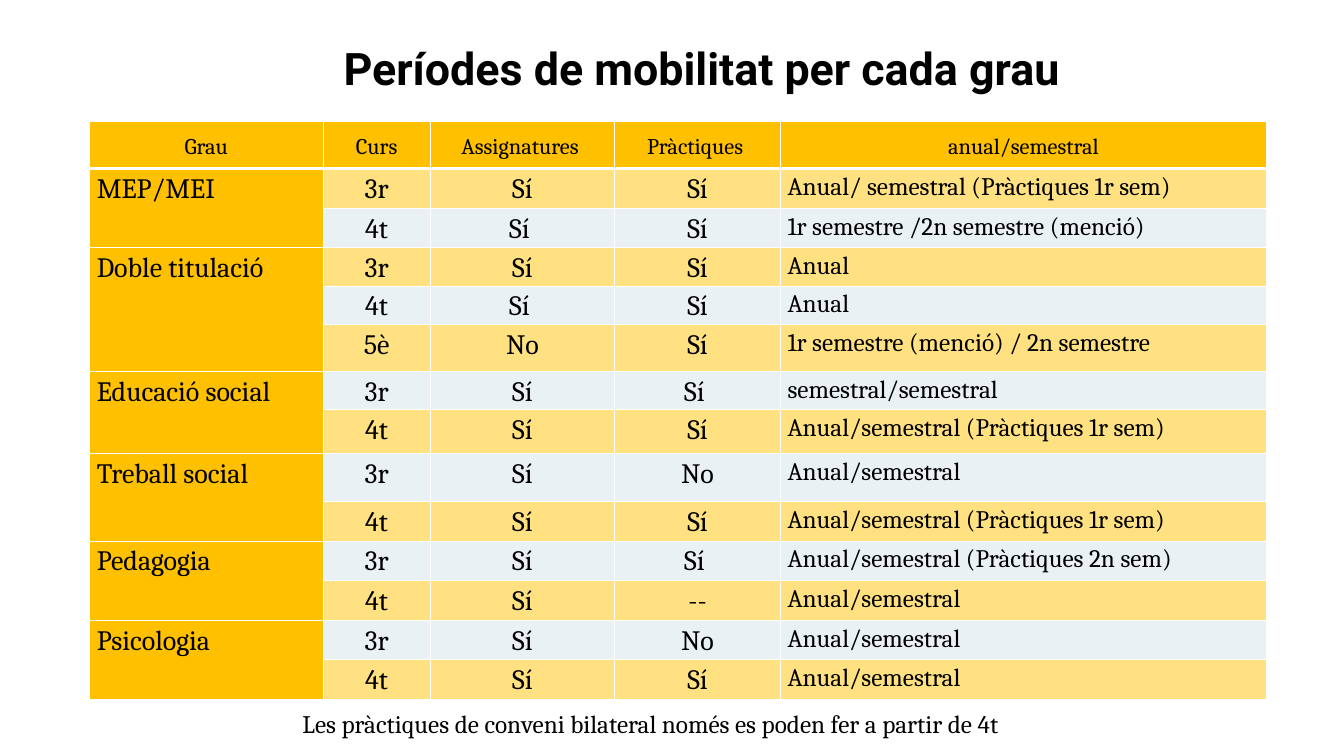
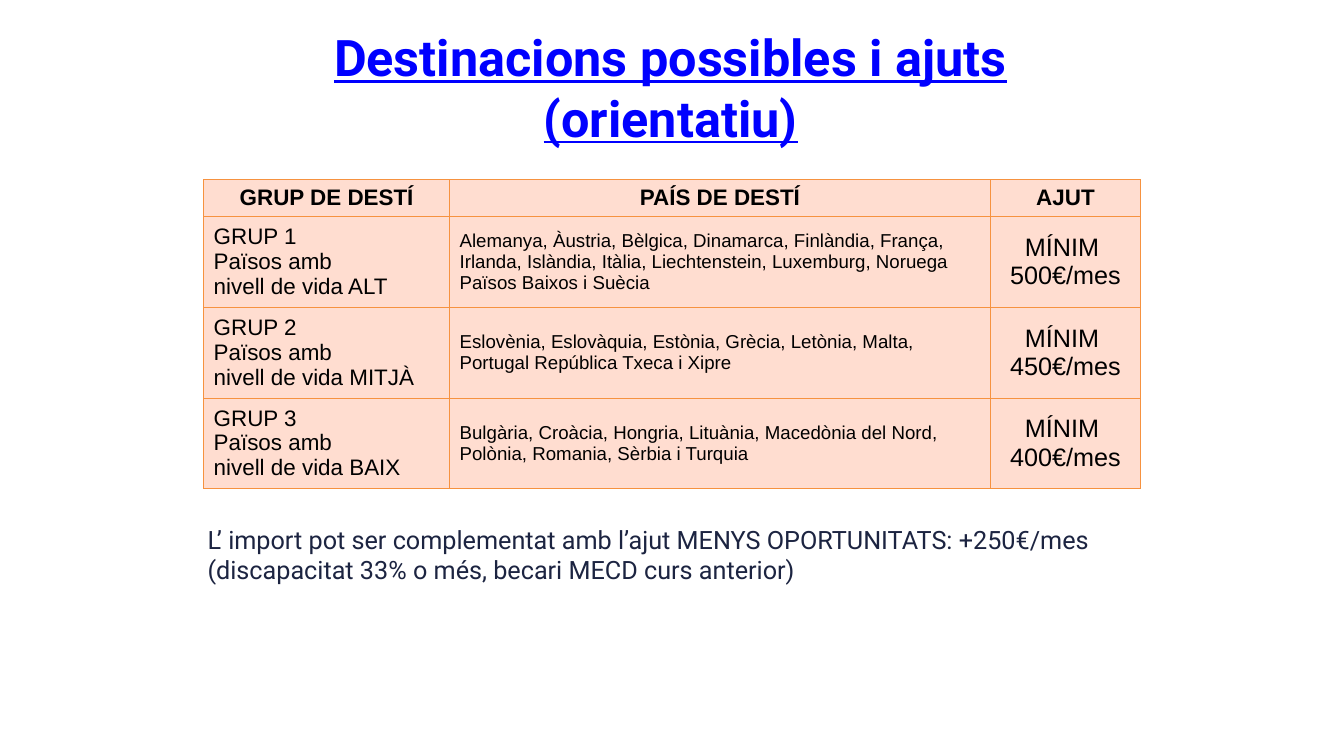
import pptx
import pptx.util
import pptx.dml.color
import pptx.enum.text
import pptx.oxml.ns
from lxml import etree

Inches, Pt = pptx.util.Inches, pptx.util.Pt
ALIGN = pptx.enum.text.PP_ALIGN
ANCHOR = pptx.enum.text.MSO_ANCHOR

BLACK, WHITE, BLUE, NAVY = "000000", "FFFFFF", "0000FF", "1C2441"
GOLD, PALE_GOLD, PALE_BLUE = "FFC000", "FFE181", "E9F1F5"
PEACH, ORANGE = "FFDDD0", "F69240"

PERIOD_HEADERS = ["Grau", "Curs", "Assignatures ", "Pràctiques ", "anual/semestral"]
PERIOD_COLS = [3.48, 1.59, 2.75, 2.46, 7.24]
PERIOD_ROWS = [0.71, 0.59, 0.54, 0.58, 0.58, 0.69, 0.54, 0.65, 0.71] + [0.59] * 5
DEGREES = [
    ("MEP/MEI", [
        ("3r", "Sí", "Sí", "Anual/ semestral (Pràctiques 1r sem)"),
        ("4t", "Sí ", "Sí", "1r semestre /2n semestre (menció)")]),
    ("Doble titulació", [
        ("3r", "Sí", "Sí", "Anual"),
        ("4t", "Sí ", "Sí", "Anual"),
        ("5è", "No", "Sí", "1r semestre (menció) / 2n semestre")]),
    ("Educació social", [
        ("3r", "Sí", "Sí ", "semestral/semestral"),
        ("4t", "Sí", "Sí", "Anual/semestral (Pràctiques 1r sem)")]),
    ("Treball social", [
        ("3r", "Sí", "No", "Anual/semestral"),
        ("4t", "Sí", "Sí", "Anual/semestral (Pràctiques 1r sem)")]),
    ("Pedagogia", [
        ("3r", "Sí", "Sí ", "Anual/semestral (Pràctiques 2n sem)"),
        ("4t", "Sí", "--", "Anual/semestral")]),
    ("Psicologia", [
        ("3r", "Sí", "No", "Anual/semestral"),
        ("4t", "Sí", "Sí", "Anual/semestral")]),
]
PERIOD_NOTE = "Les pràctiques de conveni bilateral només es poden fer a partir de 4t"

GRANT_HEADERS = ["GRUP DE DESTÍ", "PAÍS DE DESTÍ", "AJUT"]
GRANT_COLS = [3.66, 8.05, 2.23]
GRANT_ROWS = [0.55] + [1.35] * 3
GRANTS = [
    ("ALT", "Alemanya, Àustria, Bèlgica, Dinamarca, Finlàndia, França, Irlanda, Islàndia, "
            "Itàlia, Liechtenstein, Luxemburg, Noruega Països Baixos i Suècia", 500),
    ("MITJÀ", "Eslovènia, Eslovàquia, Estònia, Grècia, Letònia, Malta, "
              "Portugal República Txeca i Xipre", 450),
    ("BAIX", "Bulgària, Croàcia, Hongria, Lituània, Macedònia del Nord, "
             "Polònia, Romania, Sèrbia i Turquia", 400),
]
GRANT_NOTE = ("L’ import pot ser complementat amb l’ajut MENYS OPORTUNITATS: +250€/mes "
              "(discapacitat 33% o més, becari MECD curs anterior)")

TITLE = {"name": "Roboto", "bold": True}


def rgb(color):
    return pptx.dml.color.RGBColor.from_string(color)


def write(tf, lines, size, color=BLACK, align=ALIGN.LEFT, spacing=None, **font):
    for i, line in enumerate(lines):
        p = tf.paragraphs[0] if i == 0 else tf.add_paragraph()
        p.alignment = align
        if spacing:
            p.line_spacing = spacing
        r = p.add_run()
        r.text = line
        r.font.size = Pt(size)
        r.font.color.rgb = rgb(color)
        for key, value in font.items():
            setattr(r.font, key, value)


def set_margins(target, x, y):
    target.margin_left = target.margin_right = Inches(x)
    target.margin_top = target.margin_bottom = Inches(y)


def add_text(s, box, text, size, anchor=ANCHOR.TOP, margins=(0.1, 0.05), **style):
    tf = s.shapes.add_textbox(*map(Inches, box)).text_frame
    tf.word_wrap = True
    tf.vertical_anchor = anchor
    set_margins(tf, *margins)
    write(tf, [text], size, **style)


def add_title(s, box, text, size, **style):
    add_text(s, box, text, size, ANCHOR.MIDDLE, align=ALIGN.CENTER, **TITLE, **style)


def add_grid(s, left, top, cols, rows):
    shape = s.shapes.add_table(len(rows), len(cols), Inches(left), Inches(top),
                               Inches(sum(cols)), Inches(sum(rows)))
    table = shape.table
    table.first_row = table.horz_banding = False
    for col, width in zip(table.columns, cols):
        col.width = Inches(width)
    for row, height in zip(table.rows, rows):
        row.height = Inches(height)
    return table


def style_cell(cell, fill, line, width, margins, anchor, bottom=None):
    set_margins(cell, *margins)
    cell.vertical_anchor = anchor
    qn = pptx.oxml.ns.qn
    tc_pr = cell._tc.get_or_add_tcPr()
    for side in "LRTB":
        w = bottom if bottom and side == "B" else width
        ln = etree.SubElement(tc_pr, qn("a:ln" + side), w=str(Pt(w)))
        solid = etree.SubElement(ln, qn("a:solidFill"))
        etree.SubElement(solid, qn("a:srgbClr"), val=line)
    cell.fill.solid()
    cell.fill.fore_color.rgb = rgb(fill)


def periods_slide(s):
    add_title(s, (3.17, 0.29, 14.55, 1.54), "Períodes de mobilitat per cada grau", 48,
              spacing=Pt(50.6))
    table = add_grid(s, 1.33, 1.8, PERIOD_COLS, PERIOD_ROWS)
    rows = [PERIOD_HEADERS]
    for degree, courses in DEGREES:
        first = len(rows)
        rows += [(degree if i == 0 else "", *course) for i, course in enumerate(courses)]
        table.cell(first, 0).merge(table.cell(len(rows) - 1, 0))
    last = len(PERIOD_COLS) - 1
    for i, row in enumerate(rows):
        for j, text in enumerate(row):
            header = i == 0
            cell = table.cell(i, j)
            fill = GOLD if header or j == 0 else PALE_GOLD if i % 2 else PALE_BLUE
            style_cell(cell, fill, WHITE, 1, (0.11, 0),
                       ANCHOR.MIDDLE if header else ANCHOR.TOP, bottom=3 if header else None)
            if text:
                size = 24 if header else 27 if j == last else 30
                align = ALIGN.CENTER if header or 0 < j < last else ALIGN.LEFT
                write(cell.text_frame, [text], size, align=align, spacing=1.15, name="Cambria")
    add_text(s, (4.5, 10.54, 14.17, 0.55), PERIOD_NOTE, 27, margins=(0, 0), name="Cambria")


def grants_slide(s):
    add_title(s, (2.99, 0.76, 13.98, 1.06), "Destinacions possibles i ajuts (orientatiu)", 54,
              color=BLUE, underline=True)
    table = add_grid(s, 3.03, 2.67, GRANT_COLS, GRANT_ROWS)
    rows = [[[header] for header in GRANT_HEADERS]]
    for n, (level, countries, amount) in enumerate(GRANTS, 1):
        rows.append([[f"GRUP {n}", "Països amb", f"nivell de vida {level}"],
                     [countries], ["MÍNIM ", f"{amount}€/mes"]])
    for i, row in enumerate(rows):
        for j, lines in enumerate(row):
            header = i == 0
            cell = table.cell(i, j)
            style_cell(cell, PEACH, ORANGE, 0.75, (0.15, 0.07), ANCHOR.MIDDLE)
            write(cell.text_frame, lines, 24 if header else (24, 20, 27)[j],
                  align=ALIGN.CENTER if header or j == 2 else ALIGN.LEFT,
                  name="Arial", bold=header)
    add_text(s, (2.99, 7.75, 14.76, 1.46), GRANT_NOTE, 27, color=NAVY, name="Roboto")


def main():
    prs = pptx.Presentation()
    prs.slide_width, prs.slide_height = Inches(20), Inches(11.25)
    for build in (periods_slide, grants_slide):
        build(prs.slides.add_slide(prs.slide_layouts[6]))
    prs.save("out.pptx")


if __name__ == "__main__":
    main()
